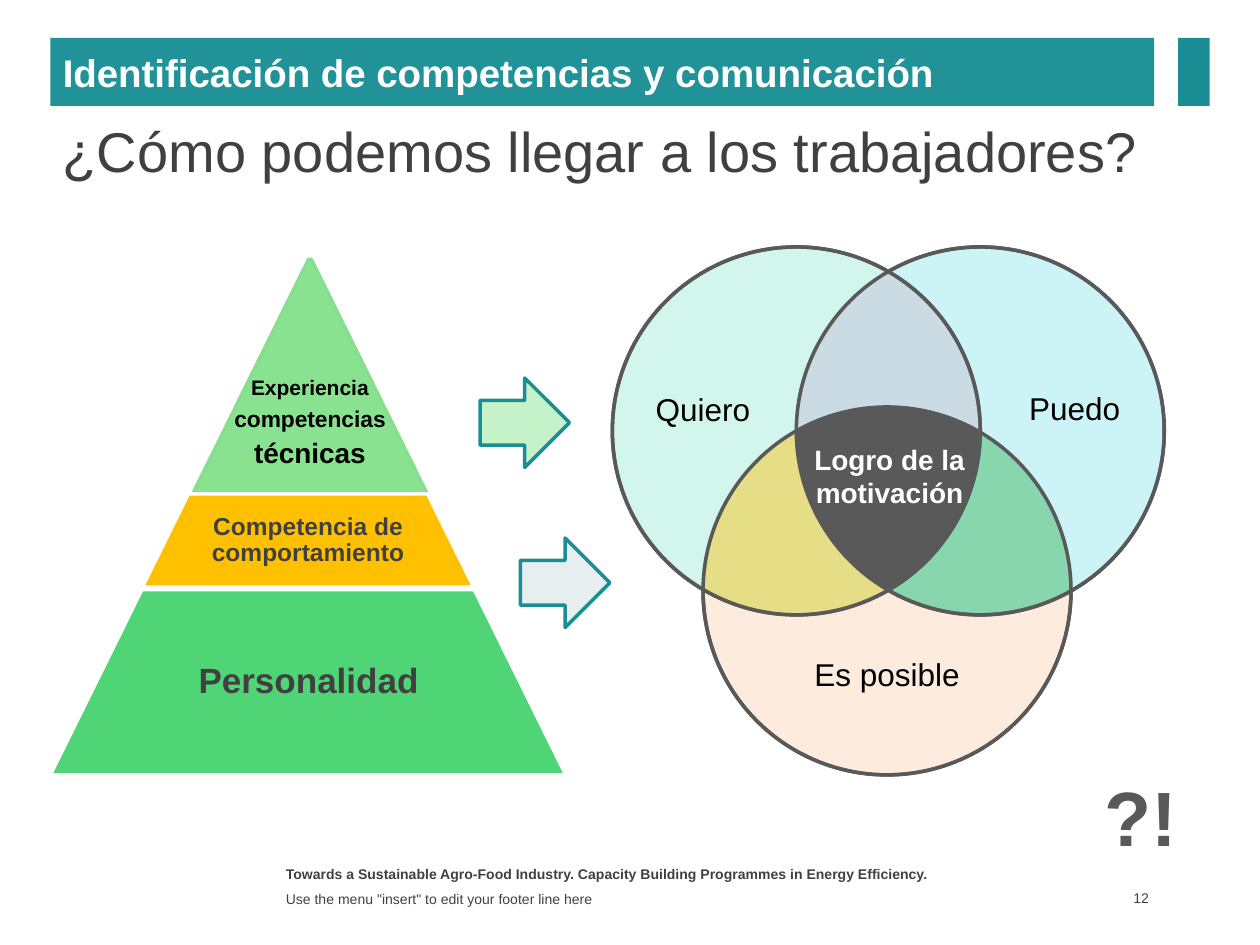
from math import cos, radians, sin, tan

from lxml.etree import SubElement
from pptx import Presentation
from pptx.dml.color import RGBColor
from pptx.enum.shapes import MSO_SHAPE as Form
from pptx.enum.text import MSO_ANCHOR as Anchor, PP_ALIGN as Align
from pptx.oxml.ns import qn
from pptx.util import Inches, Pt

COLORS = {
    "white": "FFFFFF", "black": "000000", "text": "404040", "dark": "595959",
    "bar": "209298", "teal": "1B8E95", "skills": "88E28F", "skills_edge": "87DE8D",
    "amber": "FFC000", "personality": "4FD576", "pale_green": "C6F2C9",
    "pale_grey": "E7EEEF", "peach": "FDEADA", "aqua": "C6F2F5", "mint": "CEF6EA",
    "green": "2AB151", "violet": "C9B8DB",
}

deck = Presentation()
deck.slide_width = Inches(10)
deck.slide_height = Inches(7.5)
page = deck.slides.add_slide(deck.slide_layouts[6])


def style_shape(shape, fill=None, line=None, opacity=100):
    shape.shadow.inherit = False
    if fill:
        shape.fill.solid()
        shape.fill.fore_color.rgb = RGBColor.from_string(COLORS[fill])
        if opacity < 100:
            color = shape.fill._xPr.find(qn("a:solidFill"))[0]
            SubElement(color, qn("a:alpha")).set("val", str(opacity * 1000))
    else:
        shape.fill.background()
    if line:
        shape.line.color.rgb = RGBColor.from_string(COLORS[line])
        shape.line.width = Pt(2)
    else:
        shape.line.fill.background()


def write_text(text, at=None, box=None, sizes=(18,), color="text", bold=False,
               align=Align.LEFT, anchor=Anchor.TOP, insets=(0.1, 0.05, 0.1, 0.05),
               spacing=None, after=0):
    if box is None:
        box = page.shapes.add_textbox(*map(Inches, at))
    frame = box.text_frame
    frame.word_wrap = True
    frame.vertical_anchor = anchor
    frame.margin_left, frame.margin_top, frame.margin_right, frame.margin_bottom = map(Inches, insets)
    frame.text = text
    for para, size in zip(frame.paragraphs, sizes):
        para.alignment = align
        para.line_spacing = spacing
        para.space_after = Pt(after)
        para.font.name = "Arial"
        para.font.size = Pt(size)
        para.font.bold = bold
        para.font.color.rgb = RGBColor.from_string(COLORS[color])


write_text("Towards a Sustainable Agro-Food Industry. Capacity Building Programmes in Energy Efficiency.",
           at=(2.17, 6.82, 5.5, 0.21), sizes=[8], bold=True)

levels = [
    ((1.49, 2.06, 1.94, 1.94), "skills", "skills_edge", "Experiencia\ncompetencias\ntécnicas",
     (1.49, 1.94), [12, 13, 16], "black", Anchor.BOTTOM, 0.27),
    ((1.13, 3.92, 2.63, 0.74), "amber", "white", "Competencia de comportamiento",
     (1.59, 1.71), [14], "text", Anchor.MIDDLE, 0.02),
    ((0.4, 4.68, 4.09, 1.47), "personality", "white", "Personalidad",
     (1.12, 2.66), [20], "text", Anchor.MIDDLE, 0.02),
]
for place, fill, line, text, (left, width), sizes, color, anchor, bottom in levels:
    level = page.shapes.add_shape(Form.TRAPEZOID, *map(Inches, place))
    level.adjustments[0] = 0.494
    style_shape(level, fill, line)
    write_text(text, at=(left, place[1], width, place[3]), sizes=sizes, color=color, bold=True,
               align=Align.CENTER, anchor=anchor, insets=(0.02, 0.02, 0.02, bottom),
               spacing=0.9, after=4.3 if len(sizes) > 1 else 0)

for left, top, fill in [(4.13, 4.27, "pale_grey"), (3.81, 3, "pale_green")]:
    arrow = page.shapes.add_shape(Form.RIGHT_ARROW, Inches(left), Inches(top), Inches(0.71), Inches(0.71))
    style_shape(arrow, fill, "teal")

write_text('Use the menu "insert" to edit your footer line here',
           at=(2.17, 7.04, 5.5, 0.19), sizes=[8], anchor=Anchor.MIDDLE)
write_text("12", at=(8.6, 7.03, 0.56, 0.2), sizes=[8], align=Align.RIGHT,
           anchor=Anchor.MIDDLE, insets=(0.1, 0.05, 0.04, 0.05))

title_bar = page.shapes.add_shape(Form.RECTANGLE, Inches(0.4), Inches(0.3), Inches(8.76), Inches(0.54))
style_shape(title_bar, "bar")
write_text("Identificación de competencias y comunicación", box=title_bar, sizes=[22],
           color="white", bold=True, anchor=Anchor.MIDDLE)
accent = page.shapes.add_shape(Form.RECTANGLE, Inches(9.35), Inches(0.3), Inches(0.25), Inches(0.54))
style_shape(accent, "teal")

radius = 1.46
centers = {"possible": (7.04, 4.69), "can": (7.78, 3.42), "want": (6.32, 3.42)}
circle_fills = {"possible": "peach", "can": "aqua", "want": "mint"}
overlaps = [
    ("amber", 42, [("want", 60, 120), ("possible", 180, 240), ("can", 180, 120)]),
    ("green", 42, [("can", 120, 60), ("possible", 0, -60), ("want", 0, 60)]),
    ("violet", 42, [("can", 180, 240), ("want", 300, 360), ("possible", 300, 240)]),
    ("dark", 100, [("want", 0, 60), ("can", 120, 180), ("possible", 240, 300)]),
]
for outlined in (False, True):
    for name, (x, y) in centers.items():
        circle = page.shapes.add_shape(Form.OVAL, Inches(x - radius), Inches(y - radius),
                                       Inches(2 * radius), Inches(2 * radius))
        style_shape(circle, None if outlined else circle_fills[name], "dark", 89)
    if outlined:
        continue
    for fill, opacity, arcs in overlaps:
        points = []
        for name, start, end in arcs:
            x, y = centers[name]
            middle = (start + end) / 2
            for first, last in [(start, middle), (middle, end)]:
                a, b = radians(first), radians(last)
                pull = 4 / 3 * tan((b - a) / 4)
                curve = [(cos(a), sin(a)),
                         (cos(a) - pull * sin(a), sin(a) + pull * cos(a)),
                         (cos(b) + pull * sin(b), sin(b) - pull * cos(b)),
                         (cos(b), sin(b))]
                curve = [(Inches(x + radius * u), Inches(y + radius * v)) for u, v in curve]
                points += curve[1:] if points else curve
        builder = page.shapes.build_freeform(*points[0])
        builder.add_line_segments(points[1:], close=True)
        overlap = builder.convert_to_shape()
        segments = list(overlap._element.iter(qn("a:lnTo")))
        for index in range(0, len(segments), 3):
            bezier = segments[index]
            bezier.tag = qn("a:cubicBezTo")
            for segment in segments[index + 1:index + 3]:
                bezier.append(segment[0])
                segment.getparent().remove(segment)
        style_shape(overlap, fill, opacity=opacity)

for text, place in [("Es posible", (5.85, 5.15, 2.38, 0.4)),
                    ("Puedo", (7.81, 3.04, 1.44, 0.4)),
                    ("Quiero", (4.86, 3.05, 1.44, 0.4))]:
    write_text(text, at=place, color="black", align=Align.CENTER)
write_text("Logro de la motivación", at=(6.34, 3.46, 1.44, 0.55), sizes=[16],
           color="white", bold=True, align=Align.CENTER)
write_text("¿Cómo podemos llegar a los trabajadores?", at=(0.4, 0.83, 9.19, 0.72),
           sizes=[32], align=Align.JUSTIFY, anchor=Anchor.MIDDLE)
write_text("?!", at=(8.67, 6.06, 0.98, 0.71), sizes=[44], color="dark", bold=True)

deck.save("out.pptx")
